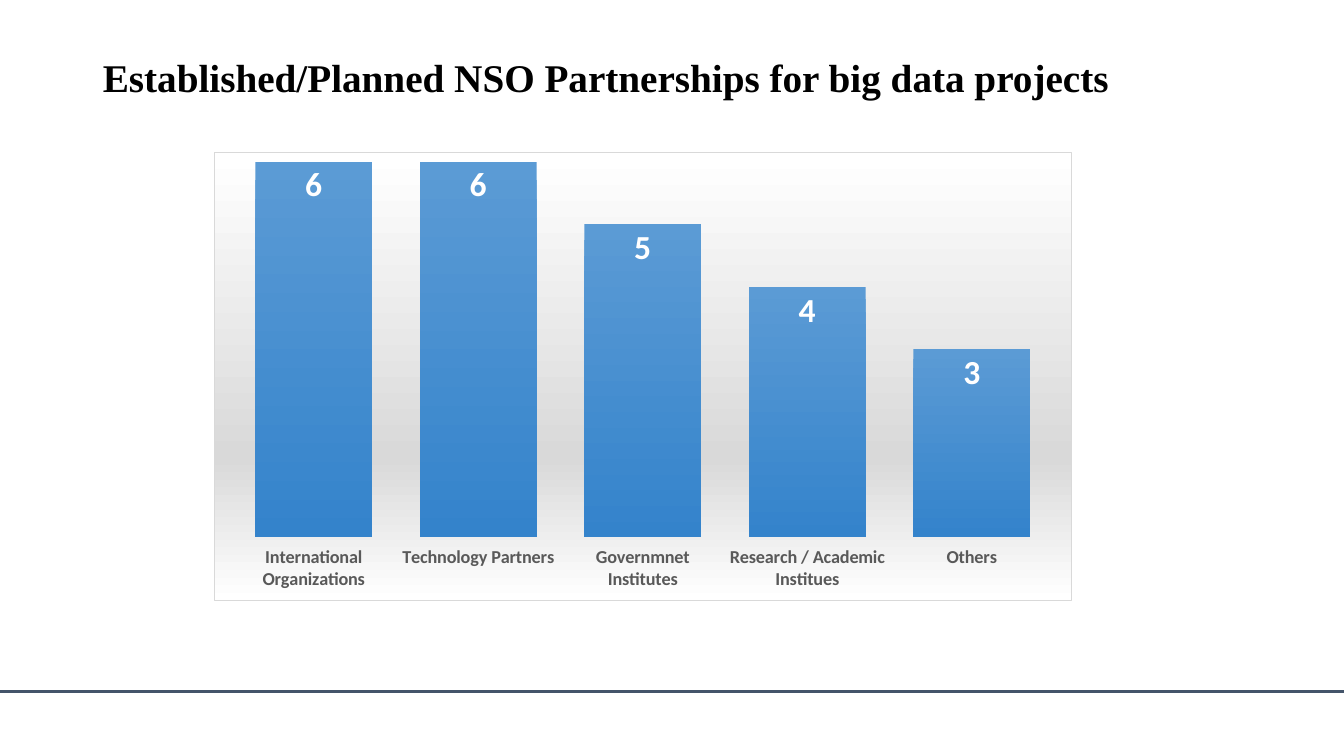
from lxml.etree import SubElement
from pptx import Presentation
from pptx.chart.data import CategoryChartData
from pptx.dml.color import RGBColor
from pptx.enum.chart import XL_CHART_TYPE, XL_LABEL_POSITION, XL_TICK_MARK
from pptx.enum.text import MSO_ANCHOR, PP_ALIGN
from pptx.enum.shapes import MSO_CONNECTOR
from pptx.oxml import parse_xml
from pptx.oxml.ns import nsdecls, qn
from pptx.util import Inches, Pt

BLACK = RGBColor(0x00, 0x00, 0x00)
WHITE = RGBColor(0xFF, 0xFF, 0xFF)
SLATE = RGBColor(0x44, 0x54, 0x6A)
LABEL_GRAY = RGBColor(0x59, 0x59, 0x59)
PANEL_GRAY = RGBColor(0xD9, 0xD9, 0xD9)
BAR_TOP = RGBColor(0x5B, 0x9B, 0xD5)
BAR_BOTTOM = RGBColor(0x34, 0x83, 0xCB)

PARTNERSHIPS = {
    "International Organizations": 6,
    "Technology Partners": 6,
    "Governmnet Institutes": 5,
    "Research / Academic Institues": 4,
    "Others": 3,
}


def style_font(font, size, color, name="Calibri", bold=True):
    font.size = Pt(size)
    font.name = name
    font.bold = bold
    font.color.rgb = color


presentation = Presentation()
presentation.slide_width = Inches(13.33)
presentation.slide_height = Inches(7.5)
slide = presentation.slides.add_slide(presentation.slide_layouts[5])

# Footer rule
rule_top = Inches(6.86)
footer_rule = slide.shapes.add_connector(
    MSO_CONNECTOR.STRAIGHT, 0, rule_top, presentation.slide_width, rule_top)
footer_rule.line.color.rgb = SLATE
footer_rule.line.width = Pt(1.5)
SubElement(footer_rule.element.spPr, qn("a:effectLst"))

# Title
title = slide.shapes.title
title.left, title.top = Inches(0.92), Inches(0.4)
title.width, title.height = Inches(11.5), Inches(0.79)
title.text_frame.text = "Established/Planned NSO Partnerships for big data projects"
title.text_frame.vertical_anchor = MSO_ANCHOR.MIDDLE
title.text_frame.word_wrap = True
heading = title.text_frame.paragraphs[0]
heading.alignment = PP_ALIGN.LEFT
heading.line_spacing = 0.9
style_font(heading.runs[0].font, 28, BLACK, "Times New Roman")

# Partnership chart
chart_data = CategoryChartData()
chart_data.categories = list(PARTNERSHIPS)
chart_data.add_series("Series 1", list(PARTNERSHIPS.values()))
chart = slide.shapes.add_chart(
    XL_CHART_TYPE.COLUMN_CLUSTERED, Inches(2.12), Inches(1.51),
    Inches(8.51), Inches(4.45), chart_data).chart
chart.has_title = False
chart.has_legend = False
style_font(chart.font, 10, BLACK, bold=False)

category_axis = chart.category_axis
category_axis.major_tick_mark = XL_TICK_MARK.OUTSIDE
category_axis.format.line.fill.background()
style_font(category_axis.tick_labels.font, 13, LABEL_GRAY)

value_axis = chart.value_axis
value_axis.minimum_scale = 0
value_axis.maximum_scale = 6
value_axis.has_major_gridlines = False
value_axis.visible = False

plot = chart.plots[0]
plot.gap_width = 41
plot.vary_by_categories = False
bar_fill = plot.series[0].format.fill
bar_fill.gradient()
bar_fill.gradient_angle = 270
for stop, color in zip(bar_fill.gradient_stops, (BAR_TOP, BAR_BOTTOM)):
    stop.color.rgb = color

data_labels = plot.series[0].data_labels
data_labels.show_value = True
data_labels.position = XL_LABEL_POSITION.INSIDE_END
style_font(data_labels.font, 24, WHITE)

# Chart panel: vertical gradient and thin border
panel_stops = "".join(
    f'<a:gs pos="{share * 1000}"><a:srgbClr val="{color}"/></a:gs>'
    for share, color in ((0, WHITE), (68, PANEL_GRAY), (100, WHITE)))
panel_format = parse_xml(
    f'<c:spPr {nsdecls("c", "a")}>'
    f'<a:gradFill><a:gsLst>{panel_stops}</a:gsLst><a:lin ang="5400000" scaled="0"/></a:gradFill>'
    f'<a:ln w="{Pt(0.75)}"><a:solidFill><a:srgbClr val="{PANEL_GRAY}"/></a:solidFill></a:ln>'
    '</c:spPr>')
chart.element.find(qn("c:chart")).addnext(panel_format)

presentation.save("out.pptx")
